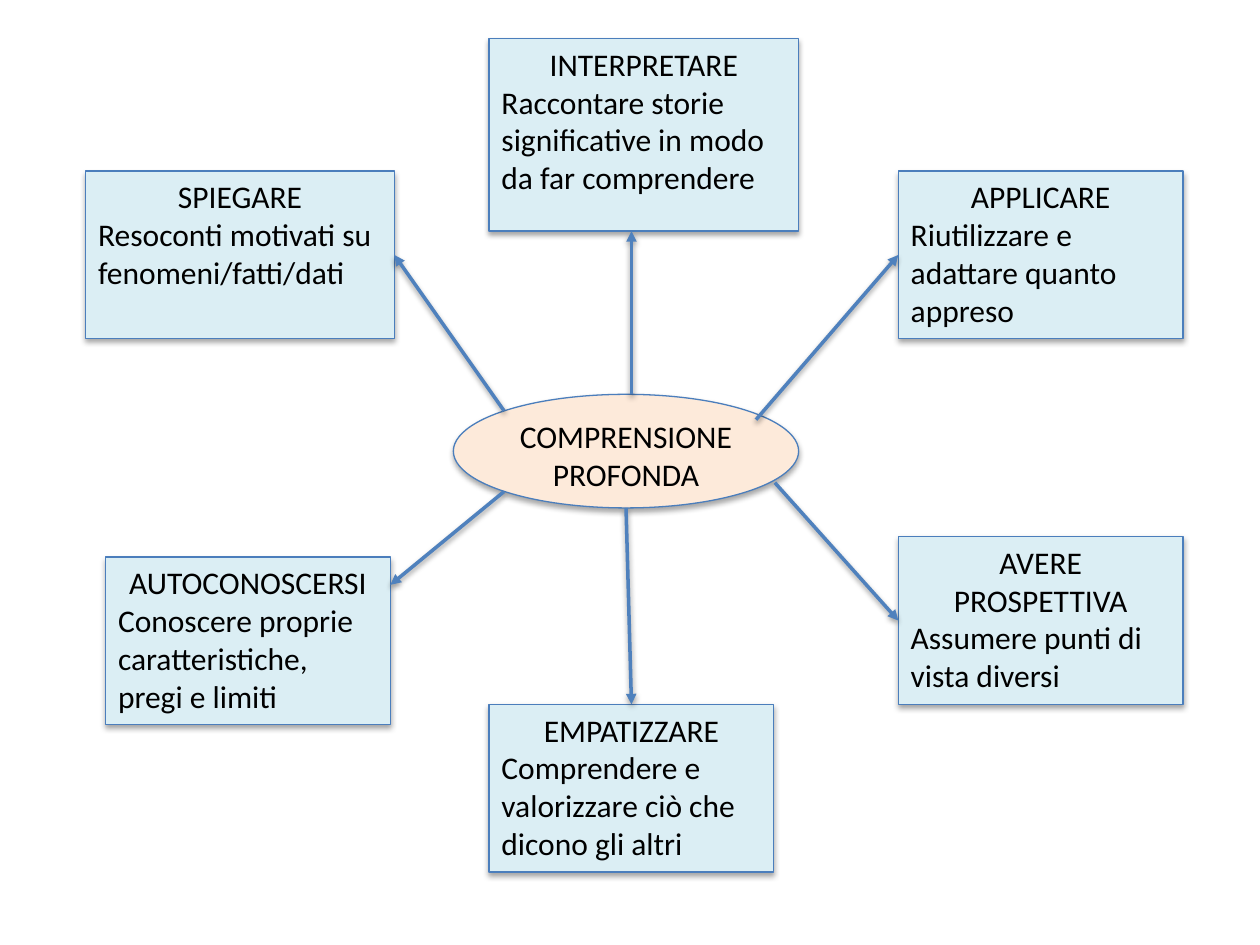
from lxml import etree
from pptx import Presentation
from pptx import util as u
from pptx.dml.color import RGBColor
from pptx.enum import shapes, text
from pptx.oxml import ns

COLORS = {"box": "DBEEF4", "core": "FDEADA", "outline": "4B7EBC",
          "arrow": "4F81BD", "text": "000000", "shadow": "000000"}
FONT = {"name": "Calibri", "size": u.Pt(18)}
FRAME = {"word_wrap": True, "vertical_anchor": text.MSO_ANCHOR.TOP}
TOP, LEFT, BOTTOM, RIGHT = range(4)

MID_X, RIGHT_X = 9.86, 18.11
BOX_W, BOX_H = 5.74, 3.38

# heading, description, (left, top, width, height)
BOXES = [
    ("SPIEGARE", "Resoconti motivati su fenomeni/fatti/dati",
     (1.73, 3.45, 6.22, BOX_H)),
    ("INTERPRETARE", "Raccontare storie significative in modo da far comprendere",
     (MID_X, 0.78, 6.24, 3.88)),
    ("APPLICARE", "Riutilizzare e adattare quanto appreso",
     (RIGHT_X, 3.45, BOX_W, BOX_H)),
    ("AUTOCONOSCERSI", "Conoscere proprie caratteristiche, pregi e limiti",
     (2.13, 11.23, BOX_W, BOX_H)),
    ("EMPATIZZARE", "Comprendere e valorizzare ciò che dicono gli altri",
     (MID_X, 14.2, BOX_W, BOX_H)),
    ("AVERE PROSPETTIVA", "Assumere punti di vista diversi",
     (RIGHT_X, 10.82, BOX_W, BOX_H)),
]

# start, end, (box heading, side) where the end meets the middle of a side
ARROWS = [
    ((10.16, 8.28), (7.95, 5.14), ("SPIEGARE", RIGHT)),
    ((15.24, 8.46), (18.11, 5.14), ("APPLICARE", LEFT)),
    ((15.62, 9.73), (18.11, 12.51), ("AVERE PROSPETTIVA", LEFT)),
    ((12.62, 10.24), (12.73, 14.2), ("EMPATIZZARE", TOP)),
    ((12.73, 7.95), (12.73, 4.66), None),
    ((10.16, 9.91), (7.87, 11.79), None),
]


def rgb(name):
    return RGBColor.from_string(COLORS[name])


def apply(obj, values):
    for key, value in values.items():
        setattr(obj, key, value)


class Diagram:
    """Holds the look of the concept map and the slide it is drawn on."""

    def __init__(self, slide):
        self.s = slide

    def shadow(self, sp, alpha, distance):
        """Add a soft shadow that falls straight down."""
        effects = etree.SubElement(sp._element.spPr, ns.qn("a:effectLst"))
        outer = etree.SubElement(effects, ns.qn("a:outerShdw"), blurRad="40000",
                                 dist=str(distance), dir="5400000", rotWithShape="0")
        color = etree.SubElement(outer, ns.qn("a:srgbClr"), val=COLORS["shadow"])
        etree.SubElement(color, ns.qn("a:alpha"), val=str(alpha * 1000))

    def panel(self, kind, place, fill, lines):
        """Draw a filled shape; lines holds (wording, alignment) pairs."""
        sp = self.s.shapes.add_shape(kind, *map(u.Cm, place))
        sp.fill.solid()
        sp.fill.fore_color.rgb = rgb(fill)
        sp.line.color.rgb = rgb("outline")
        sp.line.width = u.Pt(0.75)
        self.shadow(sp, 35, 23000)
        tf = sp.text_frame
        apply(tf, FRAME)
        for i, (wording, align) in enumerate(lines):
            p = tf.add_paragraph() if i else tf.paragraphs[0]
            p.alignment = align
            r = p.add_run()
            r.text = wording
            apply(r.font, FONT)
            r.font.color.rgb = rgb("text")
        return sp

    def core(self, place, *words):
        return self.panel(shapes.MSO_SHAPE.OVAL, place, "core",
                          [(word, text.PP_ALIGN.CENTER) for word in words])

    def box(self, place, heading, description):
        return self.panel(shapes.MSO_SHAPE.RECTANGLE, place, "box",
                          [(heading, text.PP_ALIGN.CENTER),
                           (description, text.PP_ALIGN.LEFT)])

    def arrow(self, start, end, target=None, side=None):
        c = self.s.shapes.add_connector(shapes.MSO_CONNECTOR.STRAIGHT,
                                        *map(u.Cm, start + end))
        if target is not None:
            c.end_connect(target, side)
        c.line.color.rgb = rgb("arrow")
        c.line.width = u.Pt(2)
        ln = c._element.spPr.find(ns.qn("a:ln"))
        etree.SubElement(ln, ns.qn("a:tailEnd"), type="triangle")
        self.shadow(c, 38, 20000)


def main():
    prs = Presentation()
    prs.slide_width, prs.slide_height = u.Cm(25.4), u.Cm(19.05)
    diagram = Diagram(prs.slides.add_slide(prs.slide_layouts[6]))
    diagram.core((9.14, 7.95, 6.96, 2.29), "COMPRENSIONE", "PROFONDA")
    boxes = {heading: diagram.box(place, heading, description)
             for heading, description, place in BOXES}
    for start, end, joint in ARROWS:
        if joint:
            heading, side = joint
            diagram.arrow(start, end, boxes[heading], side)
        else:
            diagram.arrow(start, end)
    prs.save("out.pptx")


if __name__ == "__main__":
    main()
